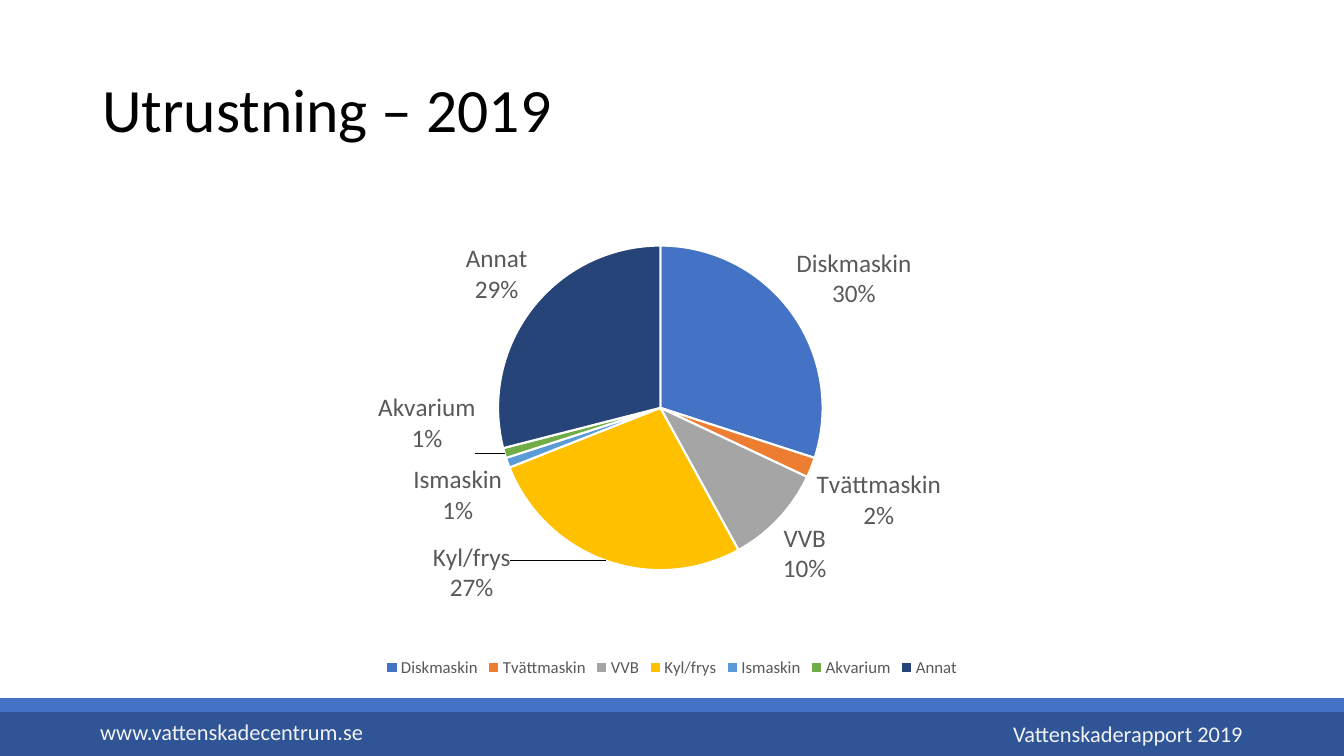
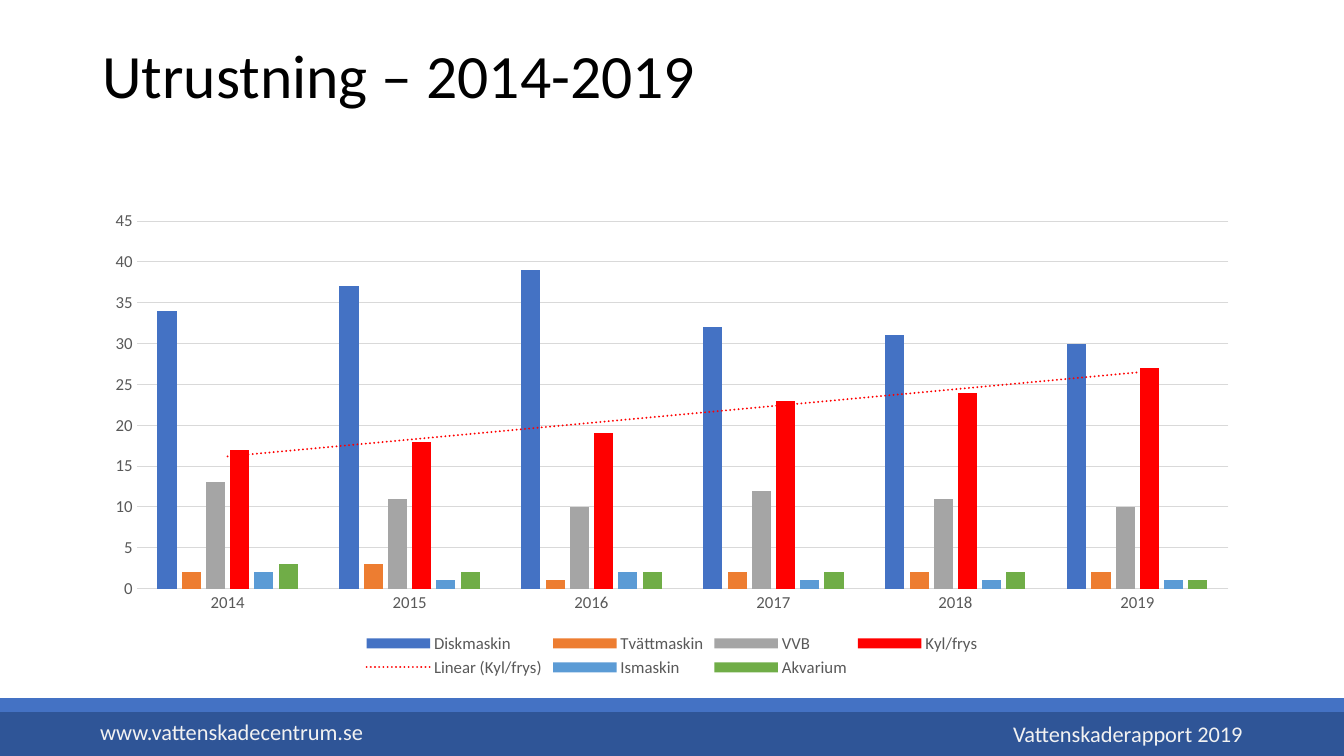
import pptx
import pptx.chart.data
import pptx.dml.color
import pptx.enum.chart
import pptx.enum.shapes
import pptx.enum.text
import pptx.oxml
import pptx.oxml.ns
import pptx.util

RGB = pptx.dml.color.RGBColor
PX = 9525  # EMU in one px, 96 px to the inch

FONT = "Calibri"
BLACK = RGB(0x00, 0x00, 0x00)
WHITE = RGB(0xFF, 0xFF, 0xFF)
OFF_WHITE = RGB(0xF2, 0xF2, 0xF2)
GREY_TEXT = RGB(0x59, 0x59, 0x59)
GRID = RGB(0xD9, 0xD9, 0xD9)
DARK_BLUE = RGB(0x2F, 0x55, 0x97)
BLUE = RGB(0x44, 0x72, 0xC4)
ORANGE = RGB(0xED, 0x7D, 0x31)
GREY = RGB(0xA5, 0xA5, 0xA5)
YELLOW = RGB(0xFF, 0xC0, 0x00)
RED = RGB(0xFF, 0x00, 0x00)
LIGHT_BLUE = RGB(0x5B, 0x9B, 0xD5)
GREEN = RGB(0x70, 0xAD, 0x47)
NAVY = RGB(0x26, 0x44, 0x78)

SLIDE_W, SLIDE_H = 1280, 720
TITLE_BOX = (88, 38, 996, 139)
CHART_BOX = (88, 192, 1104, 457)
FOOTER_BOX = (0, 665, SLIDE_W, 55)

ANCHOR = pptx.enum.text.MSO_ANCHOR
ALIGN = pptx.enum.text.PP_ALIGN
CHART = pptx.enum.chart.XL_CHART_TYPE

SHARES_2019 = [  # name, percent, colour
    ("Diskmaskin", 30, BLUE),
    ("Tvättmaskin", 2, ORANGE),
    ("VVB", 10, GREY),
    ("Kyl/frys", 27, YELLOW),
    ("Ismaskin", 1, LIGHT_BLUE),
    ("Akvarium", 1, GREEN),
    ("Annat", 29, NAVY),
]
MOVED_LABELS = {"Kyl/frys": (-0.08, -0.05), "Akvarium": (-0.02, -0.13)}

YEARS = ["2014", "2015", "2016", "2017", "2018", "2019"]
SHARES_BY_YEAR = [  # name, percent per year, colour
    ("Diskmaskin", (34, 37, 39, 32, 31, 30), BLUE),
    ("Tvättmaskin", (2, 3, 1, 2, 2, 2), ORANGE),
    ("VVB", (13, 11, 10, 12, 11, 10), GREY),
    ("Kyl/frys", (17, 18, 19, 23, 24, 27), RED),
    ("Ismaskin", (2, 1, 2, 1, 1, 1), LIGHT_BLUE),
    ("Akvarium", (3, 2, 2, 2, 2, 1), GREEN),
]
TREND_SERIES = "Kyl/frys"


def emu(box):
    return [v * PX for v in box]


def style_font(font, size, color):
    font.name = FONT
    font.size = pptx.util.Pt(size)
    font.color.rgb = color


def fill(part, color):
    part.fill.solid()
    part.fill.fore_color.rgb = color


def chart_xml(body):
    return pptx.oxml.parse_xml(body.replace(
        ">", " " + pptx.oxml.ns.nsdecls("c", "a") + ">", 1))


def add_text(s, box, text, size, color, align=ALIGN.LEFT,
             anchor=ANCHOR.MIDDLE, spacing=1.0):
    tf = s.shapes.add_textbox(*emu(box)).text_frame
    tf.word_wrap = True
    tf.vertical_anchor = anchor
    p = tf.paragraphs[0]
    p.alignment = align
    p.line_spacing = spacing
    r = p.add_run()
    r.text = text
    style_font(r.font, size, color)


def add_band(s, box, color):
    sp = s.shapes.add_shape(
        pptx.enum.shapes.MSO_SHAPE.RECTANGLE, *emu(box))
    sp.shadow.inherit = False
    fill(sp, color)
    sp.line.fill.background()


def add_footer(s, box):
    x, y, w, h = box
    add_band(s, (x, y + 7, w, h - 7), DARK_BLUE)
    add_band(s, (x, y, w, 13), BLUE)
    add_text(s, (x + 86, y + 13, 272, 38), "www.vattenskadecentrum.se",
             16, OFF_WHITE)
    add_text(s, (x + w - 359, y + 15, 272, 38), "Vattenskaderapport 2019",
             16, OFF_WHITE, ALIGN.RIGHT)


def add_slide(prs, title, anchor):
    s = prs.slides.add_slide(prs.slide_layouts[6])
    add_footer(s, FOOTER_BOX)
    add_text(s, TITLE_BOX, title, 44, BLACK, anchor=anchor, spacing=0.9)
    return s


def add_chart(s, box, kind, categories, series):
    """Add a chart with the shared font and bottom legend."""
    data = pptx.chart.data.CategoryChartData()
    data.categories = categories
    for name, values in series:
        data.add_series(name, values)
    chart = s.shapes.add_chart(kind, *emu(box), data).chart
    chart.has_title = False
    style_font(chart.font, 10, BLACK)
    chart.has_legend = True
    chart.legend.position = pptx.enum.chart.XL_LEGEND_POSITION.BOTTOM
    chart.legend.include_in_layout = False
    style_font(chart.legend.font, 12, GREY_TEXT)
    return chart


def move_label(chart, label, index, offset):
    """Shift one slice label by fractions of the chart's size."""
    style_font(label.font, 18, GREY_TEXT)
    label.position = pptx.enum.chart.XL_LABEL_POSITION.OUTSIDE_END
    node = chart.element.xpath(f".//c:dLbl[c:idx/@val='{index}']")[0]
    for tag, value in (("Val", 0), ("CatName", 1), ("Percent", 1)):
        node.xpath(f"c:show{tag}")[0].set("val", str(value))
    x, y = offset
    node.xpath("c:idx")[0].addnext(chart_xml(
        f'<c:layout><c:manualLayout><c:x val="{x}"/><c:y val="{y}"/>'
        '</c:manualLayout></c:layout>'))


def add_pie(s, box):
    names, values, colors = zip(*SHARES_2019)
    chart = add_chart(s, box, CHART.PIE, names, [("Series 1", values)])
    plot = chart.plots[0]
    plot.vary_by_categories = True
    series = plot.series[0]

    labels = series.data_labels
    labels.show_value = False
    labels.show_category_name = True
    labels.show_percentage = True
    labels.position = pptx.enum.chart.XL_LABEL_POSITION.OUTSIDE_END
    style_font(labels.font, 18, GREY_TEXT)

    for i, (name, color) in enumerate(zip(names, colors)):
        point = series.points[i]
        fill(point.format, color)
        point.format.line.color.rgb = WHITE
        point.format.line.width = pptx.util.Pt(1.5)
        if name in MOVED_LABELS:
            move_label(chart, point.data_label, i, MOVED_LABELS[name])

    for node in chart.element.xpath(".//c:showBubbleSize"):
        node.addnext(chart_xml("<c:separator>\n</c:separator>"))

    area = chart.element.xpath(".//c:plotArea")[0]
    for old in area.xpath("c:layout"):
        area.remove(old)
    area.insert(0, chart_xml(
        '<c:layout><c:manualLayout><c:layoutTarget val="inner"/>'
        '<c:xMode val="edge"/><c:yMode val="edge"/>'
        '<c:x val="0.35"/><c:y val="0.09"/>'
        '<c:w val="0.28"/><c:h val="0.68"/>'
        '</c:manualLayout></c:layout>'))


def add_trend(chart, index, color):
    """Give one series a dotted linear trend line."""
    chart.element.xpath(".//c:ser")[index].xpath("c:cat")[0].addprevious(
        chart_xml(
            '<c:trendline><c:spPr><a:ln w="19050" cap="rnd"><a:solidFill>'
            f'<a:srgbClr val="{color}"/></a:solidFill>'
            '<a:prstDash val="sysDot"/></a:ln></c:spPr>'
            '<c:trendlineType val="linear"/><c:dispRSqr val="0"/>'
            '<c:dispEq val="0"/></c:trendline>'))


def add_columns(s, box):
    chart = add_chart(s, box, CHART.COLUMN_CLUSTERED, YEARS,
                      [row[:2] for row in SHARES_BY_YEAR])
    plot = chart.plots[0]
    plot.vary_by_categories = False
    plot.gap_width = 219
    plot.overlap = -27
    for i, (name, _, color) in enumerate(SHARES_BY_YEAR):
        fill(plot.series[i].format, color)
        if name == TREND_SERIES:
            add_trend(chart, i, color)

    years, percent = chart.category_axis, chart.value_axis
    for axis in (years, percent):
        style_font(axis.tick_labels.font, 12, GREY_TEXT)
        axis.major_tick_mark = pptx.enum.chart.XL_TICK_MARK.NONE
        axis.minor_tick_mark = pptx.enum.chart.XL_TICK_MARK.NONE
    percent.minimum_scale = 0
    percent.maximum_scale = 45
    percent.major_unit = 5
    percent.has_major_gridlines = True
    percent.format.line.fill.background()
    for line in (years.format.line, percent.major_gridlines.format.line):
        line.color.rgb = GRID
        line.width = pptx.util.Pt(0.75)


def main():
    prs = pptx.Presentation()
    prs.slide_width, prs.slide_height = emu((SLIDE_W, SLIDE_H))
    add_pie(add_slide(prs, "Utrustning – 2019", ANCHOR.MIDDLE), CHART_BOX)
    add_columns(add_slide(prs, "Utrustning – 2014-2019", ANCHOR.TOP),
                CHART_BOX)
    prs.save("out.pptx")


if __name__ == "__main__":
    main()
